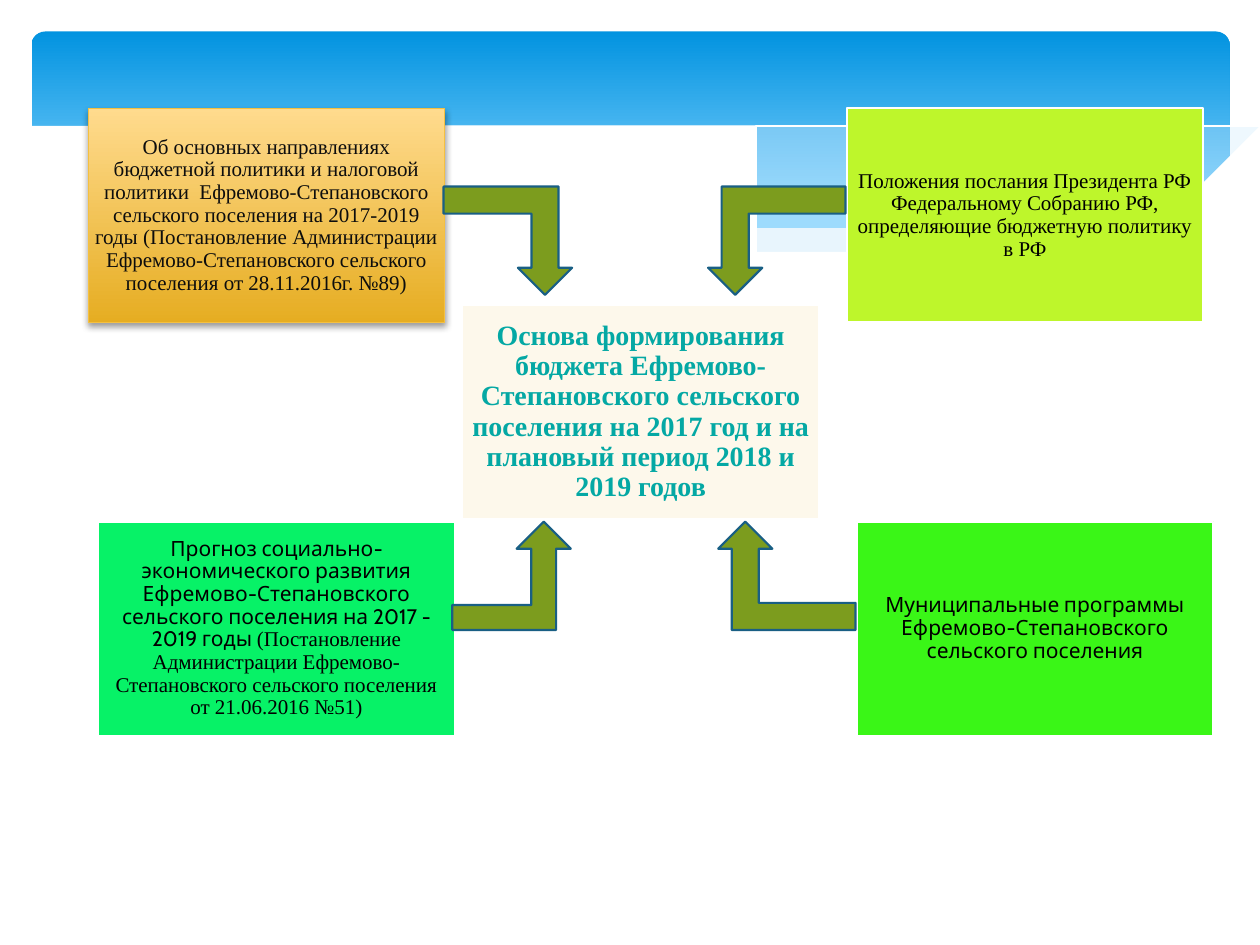
from lxml.etree import SubElement as Sub
from pptx import Presentation
from pptx.dml.color import RGBColor
from pptx.enum.shapes import MSO_SHAPE as Kind
from pptx.enum.text import MSO_ANCHOR as Anchor, PP_ALIGN as Align
from pptx.oxml.ns import qn
from pptx.util import Inches, Pt

SERIF, SANS = "Times New Roman", "Cabin"
WIDE, HIGH = 10, 7.5
BOX = (2.83, 1.7)
SKY = [(0, "0293E0"), (90, "83D3FE")]
GOLD = [(0, "FFDB8E"), (100, "E6AD22")]

# Each wave: curves joined end to end, fill, opacity
WAVES = [
    ([[(9.76, 0.94), (9.21, 1.04), (8.61, 1.18), (7.79, 1.37), (7.06, 1.52), (6.61, 1.6)],
      [(6.61, 1.6), (7.19, 1.67), (7.81, 1.72), (8.35, 1.72), (8.89, 1.66), (9.35, 1.56), (9.76, 1.41)]],
     "C6E7FC", 29),
    ([[(8.93, 1.67), (8.07, 1.54), (7.06, 1.34), (6.29, 1.16), (5.41, 0.97), (4.65, 0.86),
       (3.8, 0.8), (3.28, 0.81), (2.86, 0.86)],
      [(2.86, 0.86), (3.62, 0.97), (4.49, 1.16), (5.66, 1.43), (6.5, 1.58), (7.22, 1.68),
       (7.96, 1.73), (8.48, 1.72), (8.93, 1.67)]],
     "C6E7FC", 40),
    ([[(3.09, 0.9), (3.44, 0.84), (4.16, 0.81), (5.1, 0.86), (6.08, 0.98), (7.27, 1.2),
       (8.31, 1.45), (9.07, 1.66)]], None, 100),
    ([[(6.13, 1.51), (6.95, 1.3), (7.76, 1.11), (8.66, 0.93), (9.24, 0.84), (9.75, 0.8)]], None, 100),
    ([[(9.77, 1.41), (9.3, 1.57), (8.75, 1.67), (8.09, 1.71), (7.26, 1.67), (6.48, 1.56),
       (5.55, 1.39), (4.47, 1.14), (3.4, 0.92), (2.5, 0.81), (1.77, 0.78), (1.06, 0.83),
       (0.59, 0.93), (0.23, 1.07)],
      [(0.23, 2.24), (9.77, 2.24)]], "FFFFFF", 100),
]

# Each box: left, top, fill, opacity, line, ink, size, inset, runs
BOXES = [
    (0.7, 0.86, GOLD, 100, "F5C040", "0D0D0D", 12, 0.05,
     [("Об основных направлениях бюджетной политики и налоговой политики  Ефремово-Степановского "
       "сельского поселения на 2017-2019 годы (Постановление Администрации Ефремово-Степановского "
       "сельского поселения от 28.11.2016г. №89)", SERIF)]),
    (6.72, 0.86, "BEF62B", 100, "FFFFFF", "000000", 12, 0.05,
     [("Положения послания Президента РФ Федеральному Собранию РФ, определяющие бюджетную "
       "политику в РФ", SERIF)]),
    (6.8, 4.14, "3AF617", 100, "FFFFFF", "000000", 12, 0.05,
     [("Муниципальные программы Ефремово-Степановского сельского поселения", SANS)]),
    (0.78, 4.14, "07F267", 100, "FFFFFF", "000000", 12, 0.05,
     [("Прогноз социально-экономического развития Ефремово-Степановского сельского поселения "
       "на 2017 - 2019 годы ", SANS),
      ("(Постановление Администрации Ефремово-Степановского сельского поселения "
       "от 21.06.2016 №51)", SERIF)]),
    (3.67, 2.42, "FDF2D9", 50, "FFFFFF", "04A8A4", 16, 0.07,
     [("Основа формирования бюджета Ефремово-Степановского сельского поселения на 2017 год "
       "и на плановый период 2018 и 2019 годов", SERIF)]),
]

# Each arrow: left, top, width, rotation, flip, shaft share
ARROWS = [
    (3.59, 4.14, 0.94, 0, None, 0.23),
    (5.7, 4.14, 1.09, 180, "flipV", 0.25),
    (3.52, 1.48, 1.02, 180, "flipH", 0.25),
    (5.62, 1.48, 1.09, 180, None, 0.25),
]


def tint(text):
    return RGBColor.from_string(text)


def paint(shape, fill, line=None, width=1.25, clear=100):
    shape.shadow.inherit = False
    if isinstance(fill, list):
        shape.fill.gradient()
        shape.fill.gradient_angle = 270
        for stop, (pos, hue) in zip(shape.fill.gradient_stops, fill):
            stop.position = pos / 100
            stop.color.rgb = tint(hue)
    elif fill:
        shape.fill.solid()
        shape.fill.fore_color.rgb = tint(fill)
        if clear < 100:
            hue = shape._element.spPr.find(qn("a:solidFill"))[0]
            Sub(hue, qn("a:alpha"), val=str(clear * 1000))
    else:
        shape.fill.background()
    if line:
        shape.line.color.rgb = tint(line)
        shape.line.width = Pt(width)
    else:
        shape.line.fill.background()


def shade(shape):
    glow = shape._element.spPr.find(qn("a:effectLst"))
    drop = Sub(glow, qn("a:outerShdw"), blurRad=str(Pt(4)), dist=str(Pt(2)),
               dir="5400000", rotWithShape="0")
    hue = Sub(drop, qn("a:srgbClr"), val="000000")
    Sub(hue, qn("a:alpha"), val="38000")


def bend(knots, steps=6):
    if len(knots) < 3:
        return knots
    ends = [knots[0], *knots, knots[-1]]
    dots = []
    for a, b, c, d in zip(ends, ends[1:], ends[2:], ends[3:]):
        for t in (n / steps for n in range(steps)):
            dots.append(tuple(
                (2 * q + (r - p) * t + (2 * p - 5 * q + 4 * r - s) * t ** 2
                 + (3 * q - p - 3 * r + s) * t ** 3) / 2
                for p, q, r, s in zip(a, b, c, d)))
    return dots + [knots[-1]]


def add(kind, left, top, width, height):
    return slide.shapes.add_shape(kind, *map(Inches, (left, top, width, height)))


def wave(curves, fill, clear):
    dots = [dot for curve in curves for dot in bend(curve)]
    pen = slide.shapes.build_freeform(*dots[0], scale=Inches(1))
    pen.add_line_segments(dots[1:], close=bool(fill))
    paint(pen.convert_to_shape(), fill, None if fill else "FFFFFF", 0, clear)


def card(left, top, fill, clear, line, ink, size, inset, runs):
    shape = add(Kind.RECTANGLE, left, top, *BOX)
    paint(shape, fill, line, 0.75 if fill is GOLD else 1.25, clear)
    if fill is GOLD:
        shade(shape)
    frame = shape.text_frame
    frame.word_wrap = True
    frame.vertical_anchor = Anchor.MIDDLE
    frame.margin_left = frame.margin_right = Inches(inset)
    frame.margin_top = frame.margin_bottom = Inches(inset)
    para = frame.paragraphs[0]
    para.alignment = Align.CENTER
    para.line_spacing = 0.9
    for text, face in runs:
        run = para.add_run()
        run.text = text
        run.font.name = face
        run.font.size = Pt(size)
        run.font.bold = size > 12
        run.font.color.rgb = tint(ink)


def arrow(left, top, width, turn, flip, shaft):
    shape = add(Kind.BENT_UP_ARROW, left, top, width, 0.86)
    shape.adjustments[0] = shaft
    shape.rotation = turn
    if flip:
        shape._element.spPr.xfrm.set(flip, "1")
    paint(shape, "7C9C1E", "195F84")


deck = Presentation()
deck.slide_width, deck.slide_height = Inches(WIDE), Inches(HIGH)
slide = deck.slides.add_slide(deck.slide_layouts[6])

band = add(Kind.ROUNDED_RECTANGLE, 0.25, 0.25, 9.51, 1.56)
band.adjustments[0] = 0.07
paint(band, SKY)
for row in WAVES:
    wave(*row)
for row in BOXES:
    card(*row)
for row in ARROWS:
    arrow(*row)

deck.save("out.pptx")
